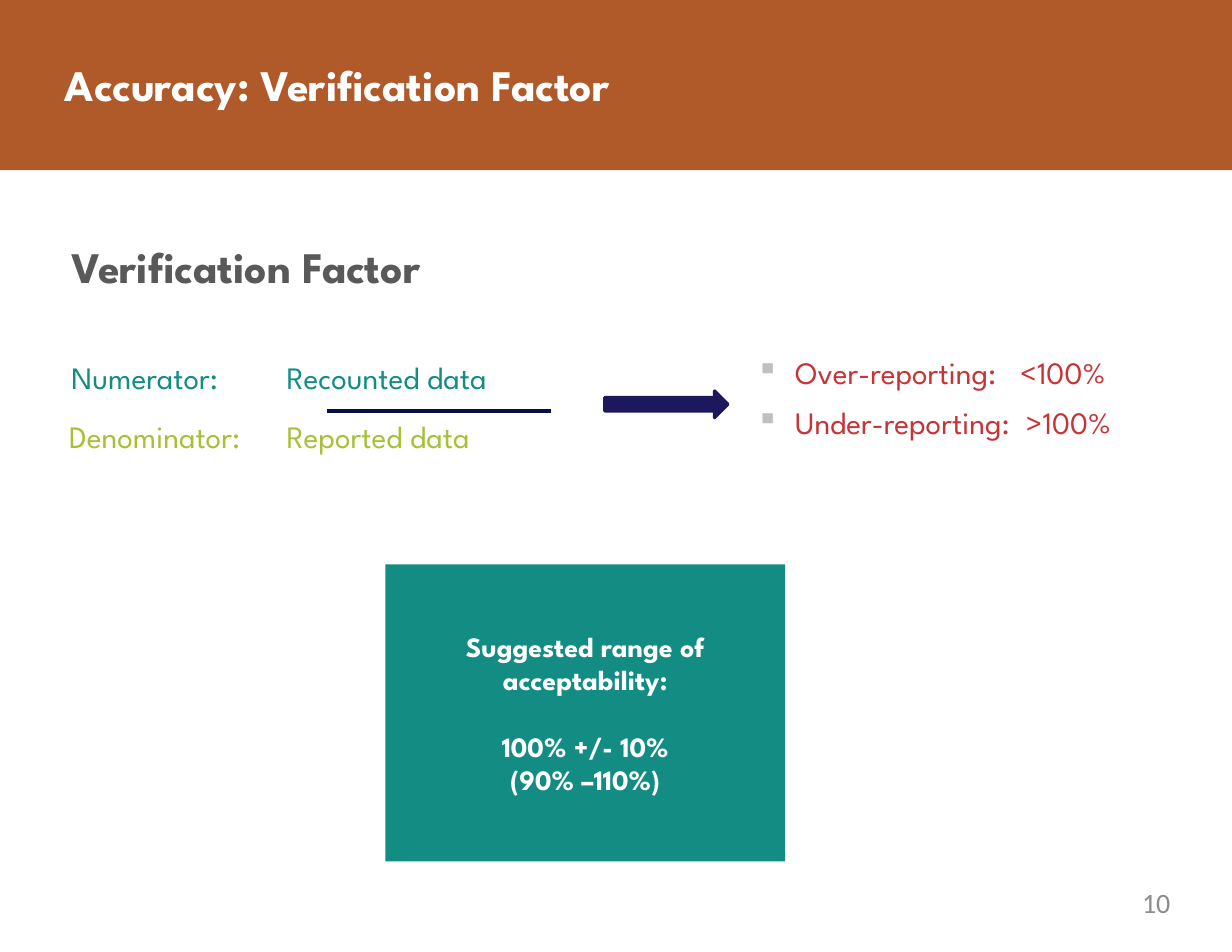
from lxml import etree
from pptx import Presentation, util as u
from pptx.dml.color import RGBColor
from pptx.enum import shapes, text
from pptx.oxml.ns import qn

COLORS = {
    "banner": "B05A2A", "white": "FFFFFF", "heading": "595959",
    "teal": "138D84", "green": "A7C038", "red": "C73437",
    "bullet": "C0C0C0", "rule": "0A103C", "arrow": "1D175E", "number": "8C8C8C",
}
FONT = "League Spartan"


def rgb(name):
    return RGBColor.from_string(COLORS[name])


def add_run(p, content, size, color, bold=False, font=FONT):
    r = p.add_run()
    r.text = content
    r.font.name, r.font.size, r.font.bold = font, u.Pt(size), bold
    r.font.color.rgb = rgb(color)


def add_tab(p, inches):
    tabs = etree.SubElement(p._p.get_or_add_pPr(), qn("a:tabLst"))
    etree.SubElement(tabs, qn("a:tab"), pos=str(u.Inches(inches)), algn="l")


def add_bullet(p, char, color, margin, indent):
    pPr = p._p.get_or_add_pPr()
    pPr.set("marL", str(u.Inches(margin)))
    pPr.set("indent", str(u.Inches(indent)))
    clr = etree.SubElement(pPr, qn("a:buClr"))
    etree.SubElement(clr, qn("a:srgbClr"), val=COLORS[color])
    etree.SubElement(pPr, qn("a:buChar"), char=char)


def add_box(s, x, y, w, h, inset=(0.1, 0.05)):
    box = s.shapes.add_textbox(*map(u.Inches, (x, y, w, h)))
    tf = box.text_frame
    tf.word_wrap = True
    tf.margin_left = tf.margin_right = u.Inches(inset[0])
    tf.margin_top = tf.margin_bottom = u.Inches(inset[1])
    return tf


def add_shape(s, kind, x, y, w, h, color, line_width=0):
    sp = s.shapes.add_shape(kind, *map(u.Inches, (x, y, w, h)))
    sp.shadow.inherit = False
    sp.fill.solid()
    sp.fill.fore_color.rgb = rgb(color)
    if line_width:
        sp.line.color.rgb = rgb(color)
        sp.line.width = u.Pt(line_width)
    else:
        sp.line.fill.background()
    return sp


def add_rule(s, x1, x2, y, color, width):
    line = s.shapes.add_connector(
        shapes.MSO_CONNECTOR.STRAIGHT, *map(u.Inches, (x1, y, x2, y)))
    line.line.color.rgb = rgb(color)
    line.line.width = u.Pt(width)
    etree.SubElement(line._element.spPr, qn("a:effectLst"))


def add_fraction(s):
    parts = [(0.54, 3.15, "Numerator:\tRecounted data", "teal"),
             (0.52, 3.68, "Denominator:\tReported data", "green")]
    for x, y, content, color in parts:
        p = add_box(s, x, y, 4.87, 0.44).paragraphs[0]
        add_tab(p, 2.46 - x)
        add_run(p, content, 20, color)
    add_rule(s, 2.92, 4.92, 3.67, "rule", 3)


def add_outcomes(s):
    tf = add_box(s, 6.5, 3.1, 4.31, 1.13, (0.11, 0.06))
    outcomes = [("Over-reporting:\t<100%", 2.5), ("Under-reporting:\t>100%", 2.55)]
    for i, (content, tab) in enumerate(outcomes):
        p = tf.add_paragraph() if i else tf.paragraphs[0]
        add_bullet(p, "▪", "bullet", 0.49, -0.35)
        add_tab(p, tab)
        p.space_before, p.space_after = u.Pt(4 if i else 0), u.Pt(4)
        add_run(p, content, 20, "red")


def add_range(s):
    sp = add_shape(s, shapes.MSO_SHAPE.RECTANGLE, 3.44, 5.04, 3.57, 2.65, "teal")
    tf = sp.text_frame
    tf.word_wrap = True
    tf.vertical_anchor = text.MSO_ANCHOR.MIDDLE
    lines = [("Suggested range of acceptability:", 0),
             ("100% +/- 10%", 21), ("(90% –110%)", 0)]
    for i, (content, gap) in enumerate(lines):
        p = tf.add_paragraph() if i else tf.paragraphs[0]
        p.alignment = text.PP_ALIGN.CENTER
        p.space_before = u.Pt(gap)
        add_run(p, content, 18, "white", bold=True)


def main():
    """Build the verification factor slide."""
    prs = Presentation()
    prs.slide_width, prs.slide_height = u.Inches(11), u.Inches(8.5)
    s = prs.slides.add_slide(prs.slide_layouts[6])

    add_shape(s, shapes.MSO_SHAPE.RECTANGLE, 0, 0, 11, 1.52, "banner")
    title = add_box(s, 0.58, 0.52, 9.9, 0.47, (0, 0))
    add_run(title.paragraphs[0], "Accuracy: Verification Factor", 28, "white", bold=True)
    heading = add_box(s, 0.53, 2.08, 9.3, 0.58, (0.11, 0.06))
    add_run(heading.paragraphs[0], "Verification Factor", 28, "heading", bold=True)

    add_fraction(s)
    add_outcomes(s)
    add_shape(s, shapes.MSO_SHAPE.RIGHT_ARROW, 5.4, 3.49, 1.1, 0.24, "arrow", 2)
    add_range(s)

    number = add_box(s, 7.92, 7.91, 2.53, 0.42, (0, 0)).paragraphs[0]
    number.alignment = text.PP_ALIGN.RIGHT
    add_run(number, "10", 18, "number", font="Calibri")
    prs.save("out.pptx")


if __name__ == "__main__":
    main()
